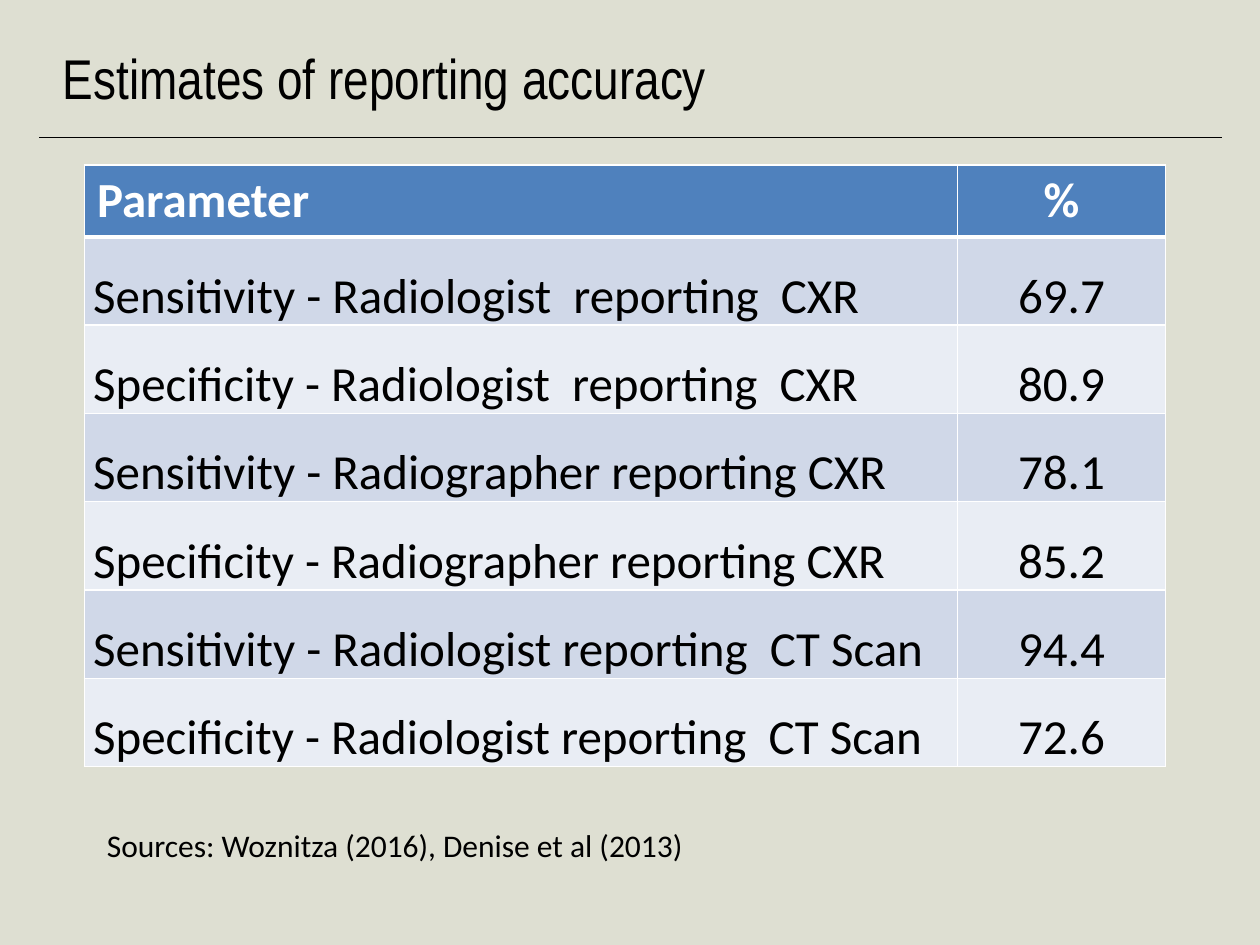
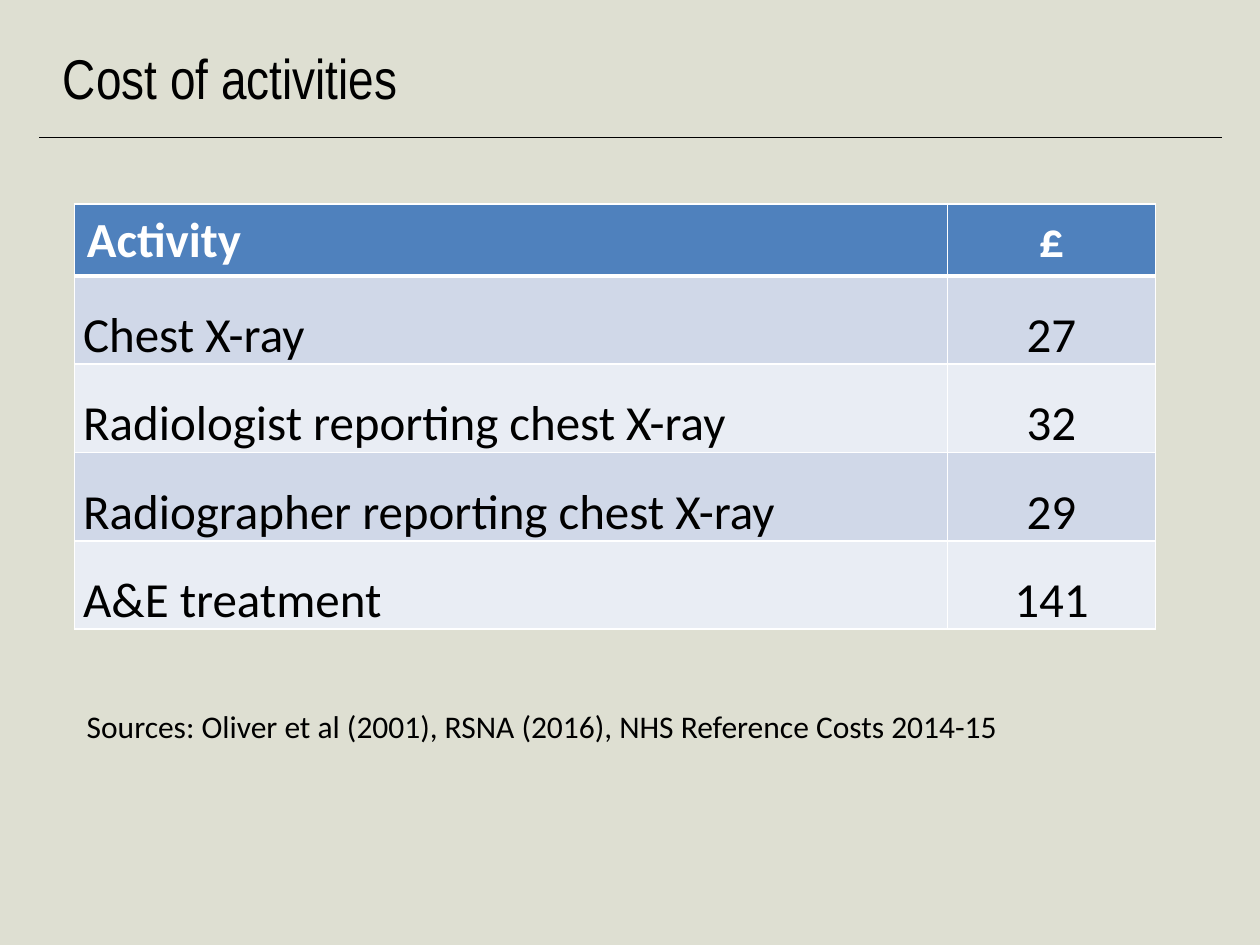
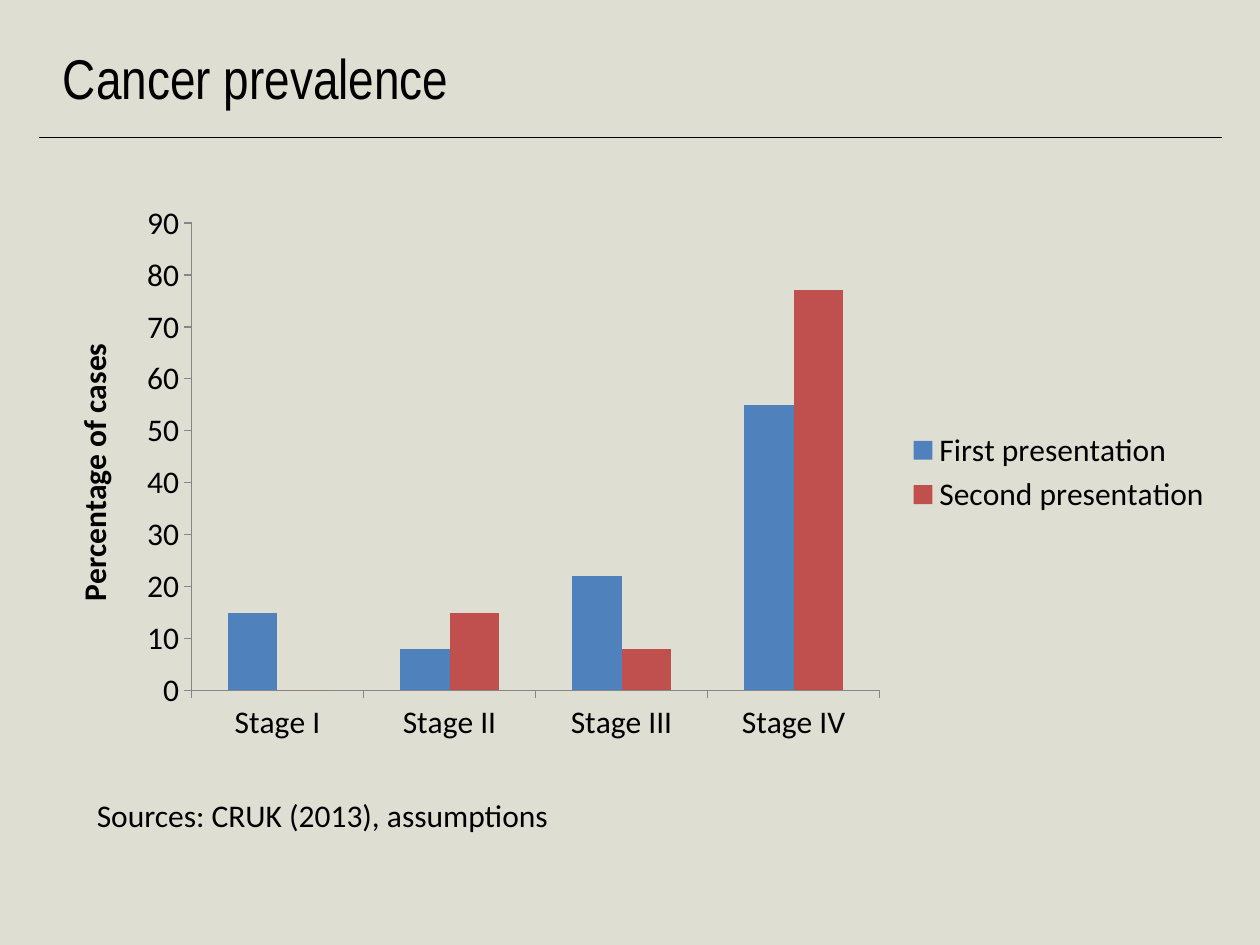
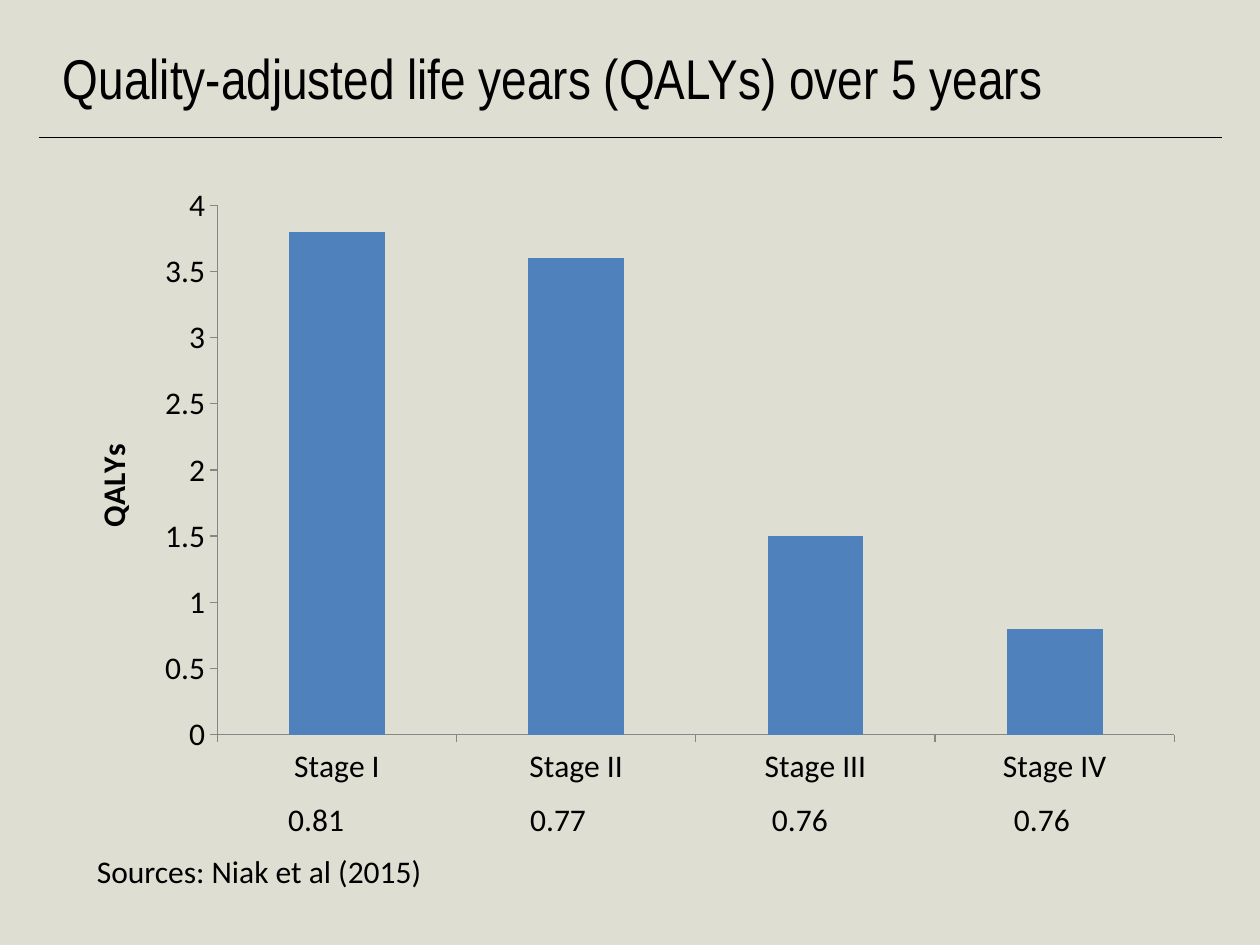
from lxml import etree
from pptx import Presentation
from pptx.chart.data import CategoryChartData
from pptx.dml.color import RGBColor
from pptx.enum.chart import XL_CHART_TYPE, XL_LEGEND_POSITION, XL_TICK_MARK
from pptx.enum.shapes import MSO_CONNECTOR
from pptx.enum.text import MSO_ANCHOR, PP_ALIGN
from pptx.oxml.ns import qn
from pptx.util import Inches, Pt

LEFT, CENTER = PP_ALIGN.LEFT, PP_ALIGN.CENTER
TOP, MIDDLE = MSO_ANCHOR.TOP, MSO_ANCHOR.MIDDLE
COLUMNS = XL_CHART_TYPE.COLUMN_CLUSTERED
TICK_OUT = XL_TICK_MARK.OUTSIDE
LEGEND_RIGHT = XL_LEGEND_POSITION.RIGHT
STRAIGHT = MSO_CONNECTOR.STRAIGHT

COLORS = {
    "background": "DEDFD2", "text": "000000", "white": "FFFFFF",
    "blue": "4F81BD", "red": "C0504D", "axis": "868686",
    "band_dark": "D0D8E8", "band_light": "E9EDF4",
}
TITLE_FONT, BODY_FONT = "Arial Narrow", "Calibri"
STAGES = ["Stage I", "Stage II", "Stage III", "Stage IV"]

SLIDES = [
    {
        "title": "Estimates of reporting accuracy",
        "table": {
            "at": (0.67, 1.31),
            "rows": [
                ("Parameter", "%"),
                ("Sensitivity - Radiologist  reporting  CXR", "69.7"),
                ("Specificity - Radiologist  reporting  CXR", "80.9"),
                ("Sensitivity - Radiographer reporting CXR", "78.1"),
                ("Specificity - Radiographer reporting CXR", "85.2"),
                ("Sensitivity - Radiologist reporting  CT Scan", "94.4"),
                ("Specificity - Radiologist reporting  CT Scan", "72.6"),
            ],
        },
        "sources": ("Sources: Woznitza (2016), Denise et al (2013)", (0.75, 6.51, 4.83, 0.4)),
    },
    {
        "title": "Cost of activities",
        "table": {
            "at": (0.59, 1.62),
            "rows": [
                ("Activity", "£"),
                ("Chest X-ray", "27"),
                ("Radiologist reporting chest X-ray", "32"),
                ("Radiographer reporting chest X-ray", "29"),
                ("A&E treatment", "141"),
            ],
        },
        "sources": ("Sources: Oliver et al (2001), RSNA (2016), NHS Reference Costs 2014-15",
                    (0.59, 5.56, 7.67, 0.4)),
    },
    {
        "title": "Cancer prevalence",
        "chart": {
            "at": (0.35, 1.53, 9.37, 4.44),
            "axis_title": "Percentage of cases", "max": 90, "step": 10, "legend": True,
            "series": [("First presentation", (15, 8, 22, 55), "blue"),
                       ("Second presentation", (0, 15, 8, 77), "red")],
        },
        "sources": ("Sources: CRUK (2013), assumptions", (0.67, 6.27, 3.83, 0.4)),
    },
    {
        "title": "Quality-adjusted life years (QALYs) over 5 years",
        "chart": {
            "at": (0.5, 1.38, 9, 4.95),
            "axis_title": "QALYs", "max": 4, "step": 0.5, "legend": False,
            "series": [("Series 1", (3.8, 3.6, 1.5, 0.8), "blue")],
        },
        "stage_weights": ("0.81", "0.77", "0.76", "0.76"),
        "sources": ("Sources: Niak et al (2015)", (0.67, 6.71, 2.91, 0.4)),
    },
]

TITLE_AT = (0.5, 0.3, 9, 0.63)
RULE_X, RULE_Y = (0.31, 9.7), 1.09
COLUMN_WIDTHS = (6.93, 1.65)
HEADER_HEIGHT, ROW_HEIGHT = 0.57, 0.7
WEIGHTS_AT = (1.74, 6.3, 7.32, 0.4)
FIRST_TAB, TAB_STEP = 0.67, 1.92


def rgb(name):
    return RGBColor.from_string(COLORS[name])


def style_font(font, size=18, color="text", bold=False, name=BODY_FONT):
    font.name, font.size, font.bold = name, Pt(size), bold
    font.color.rgb = rgb(color)


def write(frame, text, align=LEFT, spacing=None, **font):
    paragraph = frame.paragraphs[0]
    paragraph.alignment = align
    if spacing:
        paragraph.line_spacing = spacing
    run = paragraph.add_run()
    run.text = text
    style_font(run.font, **font)
    return paragraph


def add_text(slide, text, at, wrap=False, inset=None, anchor=TOP, **form):
    frame = slide.shapes.add_textbox(*map(Inches, at)).text_frame
    frame.word_wrap = wrap
    frame.vertical_anchor = anchor
    if inset is not None:
        frame.margin_left = frame.margin_right = Inches(inset)
        frame.margin_top = frame.margin_bottom = Inches(inset)
    return write(frame, text, **form)


def add_rule(slide):
    start, end = map(Inches, RULE_X)
    rule = slide.shapes.add_connector(STRAIGHT, start, Inches(RULE_Y), end, Inches(RULE_Y))
    rule.line.color.rgb = rgb("text")
    rule.line.width = Pt(0.25)
    etree.SubElement(rule._element.spPr, qn("a:effectLst"))


def set_borders(cell, top, bottom):
    """White lines round a cell; call before the fill is set, as order matters."""
    properties = cell._tc.get_or_add_tcPr()
    for side, points in (("L", 1), ("R", 1), ("T", top), ("B", bottom)):
        line = etree.SubElement(properties, qn(f"a:ln{side}"), w=str(Pt(points)))
        fill = etree.SubElement(line, qn("a:solidFill"))
        etree.SubElement(fill, qn("a:srgbClr"), val=COLORS["white"])


def add_table(slide, at, rows):
    height = HEADER_HEIGHT + ROW_HEIGHT * (len(rows) - 1)
    size = (sum(COLUMN_WIDTHS), height)
    table = slide.shapes.add_table(len(rows), len(COLUMN_WIDTHS),
                                   *map(Inches, at + size)).table
    for column, width in zip(table.columns, COLUMN_WIDTHS):
        column.width = Inches(width)
    for r, row in enumerate(rows):
        header = r == 0
        table.rows[r].height = Inches(HEADER_HEIGHT if header else ROW_HEIGHT)
        band = "blue" if header else ("band_light", "band_dark")[r % 2]
        for c, text in enumerate(row):
            cell = table.cell(r, c)
            set_borders(cell, top=3 if r == 1 else 1, bottom=3 if header else 1)
            cell.fill.solid()
            cell.fill.fore_color.rgb = rgb(band)
            if not header:
                cell.vertical_anchor = MIDDLE
                cell.margin_left = cell.margin_right = Inches(0.07)
                cell.margin_top = cell.margin_bottom = 0
            write(cell.text_frame, text, align=CENTER if c else LEFT,
                  spacing=None if header else 1.5, size=28, bold=header,
                  color="white" if header else "text")


def add_chart(slide, spec_):
    data = CategoryChartData()
    data.categories = STAGES
    for name, values, _ in spec_["series"]:
        data.add_series(name, values)
    chart = slide.shapes.add_chart(COLUMNS, *map(Inches, spec_["at"]), data).chart
    style_font(chart.font)
    chart.has_title = False
    chart.has_legend = spec_["legend"]
    if chart.has_legend:
        chart.legend.position = LEGEND_RIGHT
        chart.legend.include_in_layout = False

    plot = chart.plots[0]
    plot.gap_width, plot.overlap, plot.vary_by_categories = 150, 0, False
    for series, (_, _, color) in zip(plot.series, spec_["series"]):
        series.format.fill.solid()
        series.format.fill.fore_color.rgb = rgb(color)
        series.invert_if_negative = False

    for axis in (chart.category_axis, chart.value_axis):
        axis.has_major_gridlines = False
        axis.major_tick_mark = TICK_OUT
        axis.format.line.color.rgb = rgb("axis")
        style_font(axis.tick_labels.font)
    scale = chart.value_axis
    scale.minimum_scale, scale.maximum_scale = 0, spec_["max"]
    scale.major_unit = spec_["step"]
    write(scale.axis_title.text_frame, spec_["axis_title"], align=CENTER, bold=True)


def add_weights(slide, weights):
    """One line of values, each centred on a tab stop under its column."""
    line = add_text(slide, "".join("\t" + weight for weight in weights), WEIGHTS_AT, wrap=True)
    stops = etree.SubElement(line._p.get_or_add_pPr(), qn("a:tabLst"))
    for i in range(len(weights)):
        etree.SubElement(stops, qn("a:tab"), pos=str(Inches(FIRST_TAB + i * TAB_STEP)),
                         algn="ctr")


def main():
    deck = Presentation()
    deck.slide_width, deck.slide_height = Inches(10), Inches(7.5)
    blank = deck.slide_layouts[6]
    for content in SLIDES:
        slide = deck.slides.add_slide(blank)
        slide.background.fill.solid()
        slide.background.fill.fore_color.rgb = rgb("background")
        add_rule(slide)
        add_text(slide, content["title"], TITLE_AT, wrap=True, inset=0, anchor=MIDDLE,
                 size=32, name=TITLE_FONT)
        if "table" in content:
            add_table(slide, **content["table"])
        if "chart" in content:
            add_chart(slide, content["chart"])
        if "stage_weights" in content:
            add_weights(slide, content["stage_weights"])
        add_text(slide, *content["sources"])
    deck.save("out.pptx")


if __name__ == "__main__":
    main()
